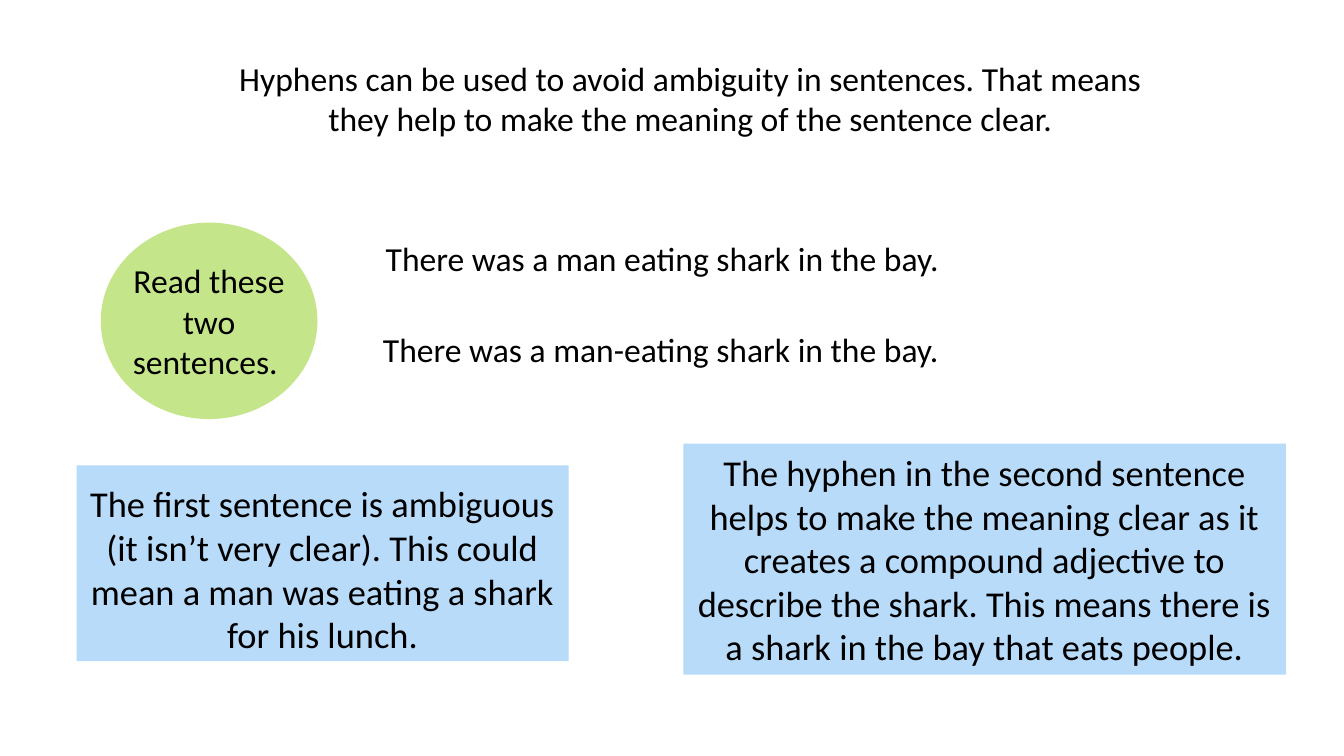
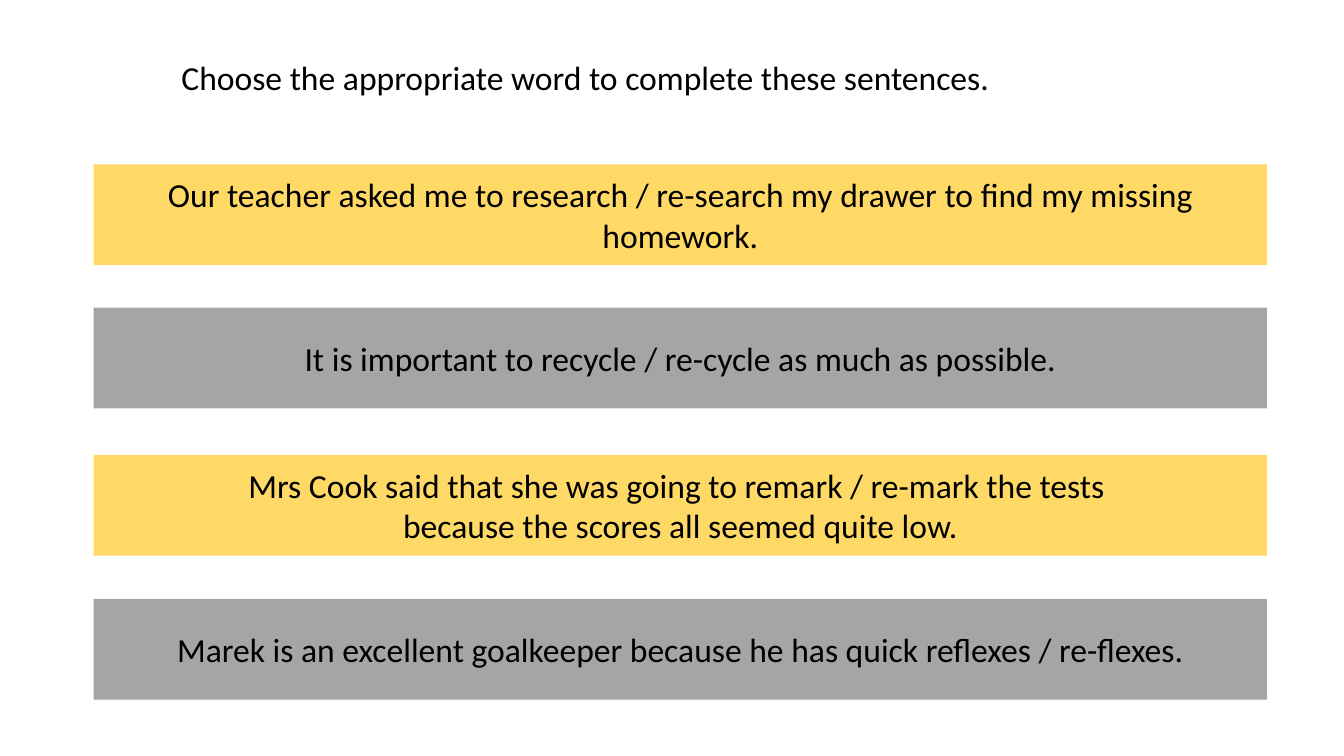
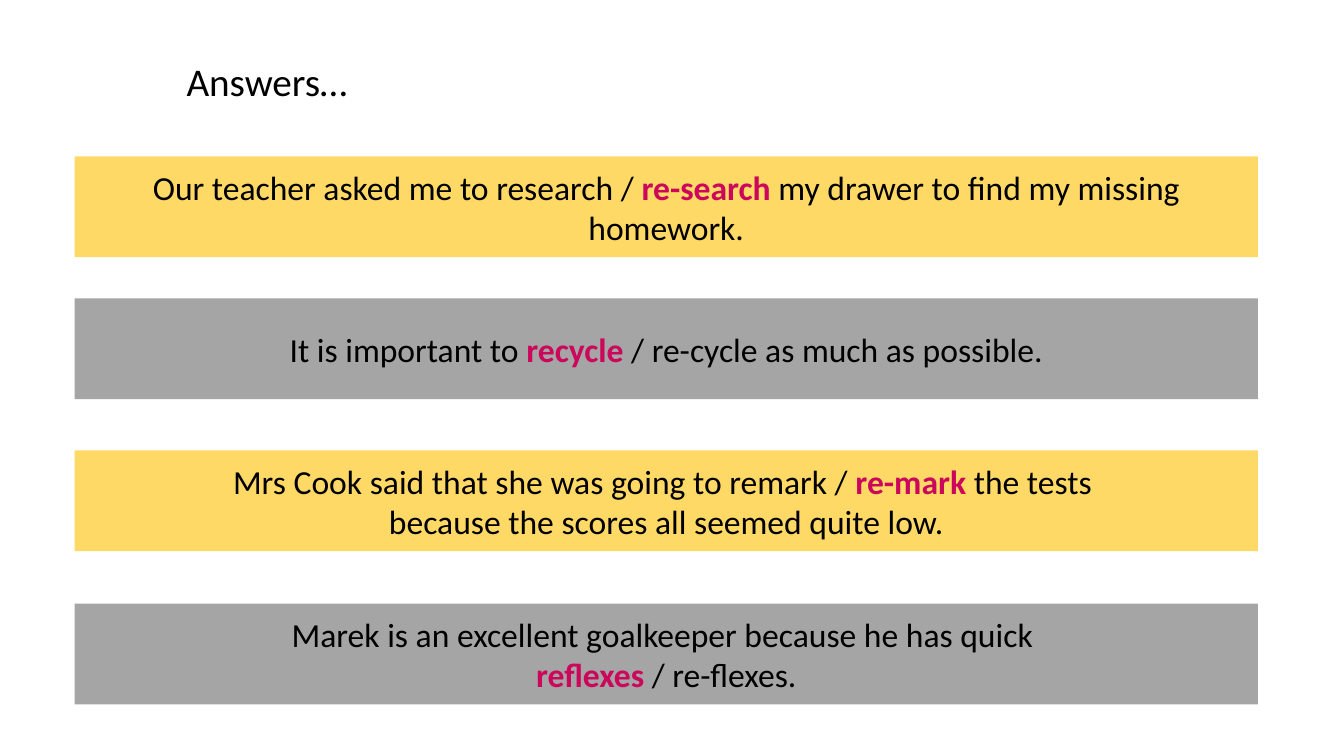
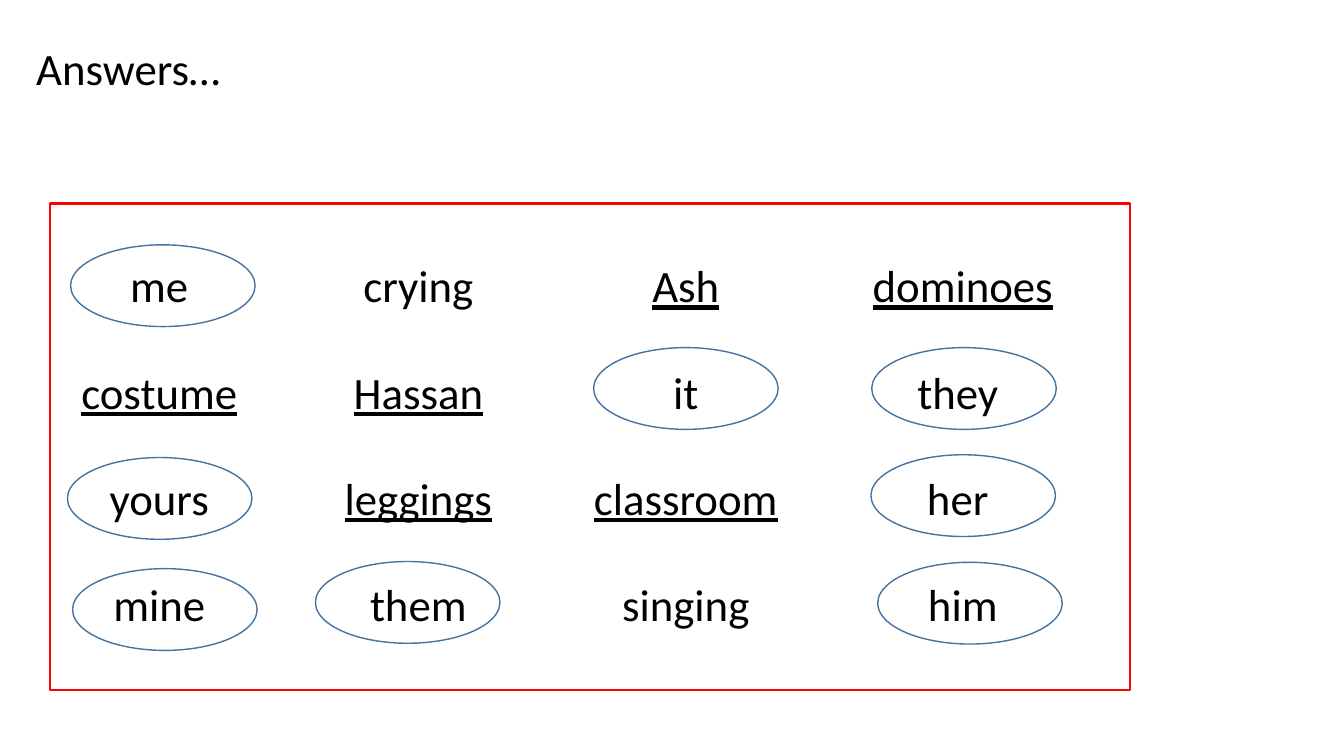
from pptx import Presentation
from pptx.dml.color import RGBColor
from pptx.enum import shapes, text
from pptx.util import Cm, Pt

BLACK = "000000"
PINK = "CB065B"
BLUE = "B8DBFA"
GREEN = "C5E58B"
YELLOW = "FFD966"
GREY = "A5A5A5"
RED = "FF0000"
RING_BLUE = "43739E"

LEFT, CENTER = text.PP_ALIGN.LEFT, text.PP_ALIGN.CENTER
TOP, MIDDLE, BOTTOM = text.MSO_ANCHOR.TOP, text.MSO_ANCHOR.MIDDLE, text.MSO_ANCHOR.BOTTOM
RECTANGLE, OVAL = shapes.MSO_SHAPE.RECTANGLE, shapes.MSO_SHAPE.OVAL
DEFAULT_INSETS = (0.25, 0.13)
TITLE_INSETS = (0, 0.2)
BAND_INSETS = (0.3, 0.3)

SENTENCES = [
    "Our teacher asked me to research / *re-search *my drawer to find my missing homework.",
    "It is important to *recycle */ re-cycle as much as possible.",
    "Mrs Cook said that she was going to remark / *re-mark *the tests \n"
    "because the scores all seemed quite low.",
    "Marek is an excellent goalkeeper because he has quick *reflexes */ re-flexes.",
]
NOUNS = {"costume", "Hassan", "leggings", "Ash", "classroom", "dominoes"}
WORD_COLUMNS = [
    (1.5, 5.03, ["me", "costume", "yours", "mine"]),
    (8.03, 5.03, ["crying", "Hassan", "leggings", "them"]),
    (14.53, 5.51, ["Ash", "it", "classroom", "singing"]),
    (21.51, 5.51, ["dominoes", "they ", "her ", "him"]),
]
PRONOUN_RINGS = [
    (1.78, 6.17), (1.7, 11.53), (1.83, 14.33), (7.95, 14.15),
    (14.96, 8.76), (21.97, 8.76), (21.95, 11.46), (22.12, 14.17),
]


def color(value):
    return RGBColor.from_string(value)


class Lesson:
    font = "Calibri"

    def __init__(self):
        self.deck = Presentation()
        self.deck.slide_width, self.deck.slide_height = Cm(33.87), Cm(19.05)
        self.page = None

    def style(self, span, size, tone=BLACK, bold=False):
        span.font.name = self.font
        span.font.size = Pt(size)
        span.font.bold = bold
        span.font.color.rgb = color(tone)

    def fill_text(self, box, content, size, align=CENTER, anchor=TOP, insets=DEFAULT_INSETS):
        frame = box.text_frame
        frame.word_wrap = True
        frame.auto_size = text.MSO_AUTO_SIZE.NONE
        frame.vertical_anchor = anchor
        frame.margin_left = frame.margin_right = Cm(insets[0])
        frame.margin_top = frame.margin_bottom = Cm(insets[1])
        para = frame.paragraphs[0]
        para.alignment = align
        for row, line in enumerate(content.split("\n")):
            if row:
                para.add_line_break()
            for index, piece in enumerate(line.split("*")):
                if piece:
                    span = para.add_run()
                    span.text = piece
                    answer = index % 2 == 1
                    self.style(span, size, PINK if answer else BLACK, answer)

    def new_page(self, title, area, size=24, align=LEFT, insets=TITLE_INSETS):
        self.page = self.deck.slides.add_slide(self.deck.slide_layouts[5])
        box = self.page.shapes.title
        box.left, box.top, box.width, box.height = map(Cm, area)
        self.fill_text(box, title, size, align, insets=insets)

    def shape(self, kind, area, fill=None, line=None, width=1):
        box = self.page.shapes.add_shape(kind, *map(Cm, area))
        box.shadow.inherit = False
        if fill:
            box.fill.solid()
            box.fill.fore_color.rgb = color(fill)
        else:
            box.fill.background()
        if line:
            box.line.color.rgb = color(line)
            box.line.width = Pt(width)
        else:
            box.line.fill.background()
        return box

    def panel(self, content, area, fill, size=26, anchor=MIDDLE, insets=DEFAULT_INSETS):
        box = self.shape(RECTANGLE, area, fill)
        self.fill_text(box, content, size, anchor=anchor, insets=insets)

    def label(self, content, area, align=LEFT):
        box = self.page.shapes.add_textbox(*map(Cm, area))
        self.fill_text(box, content, 24, align)

    def bands(self, sentences, left, width, tops):
        for index, (sentence, top) in enumerate(zip(sentences, tops)):
            fill = GREY if index % 2 else YELLOW
            self.panel(sentence, (left, top, width, 2.54), fill, 24, insets=BAND_INSETS)

    def word_column(self, words, left, width):
        box = self.page.shapes.add_textbox(Cm(left), Cm(6.38), Cm(width), Cm(9.83))
        frame = box.text_frame
        frame.word_wrap = True
        frame.text = "\n".join(words)
        for index, para in enumerate(frame.paragraphs):
            para.alignment = CENTER
            if index:
                para.space_before = Pt(37.5)
            for span in para.runs:
                self.style(span, 32)
                span.font.underline = span.text in NOUNS


def explain_hyphens(lesson):
    lesson.new_page(
        "Hyphens can be used to avoid ambiguity in sentences. That means "
        "they help to make the meaning of the sentence clear.",
        (5.33, 1.32, 24.13, 2.31), align=CENTER, insets=DEFAULT_INSETS)
    lesson.label("There was a man eating shark in the bay.", (9.47, 5.87, 16.94, 1.27))
    lesson.label("There was a man-eating shark in the bay.", (9.4, 8.15, 22.53, 1.27))
    lesson.shape(OVAL, (2.54, 5.61, 5.46, 4.95), GREEN)
    lesson.label("Read these two sentences. ", (2.92, 6.43, 4.7, 3.33), CENTER)
    lesson.panel(
        "The first sentence is ambiguous (it isn’t very clear). This could "
        "mean a man was eating a shark for his lunch.",
        (1.93, 11.73, 12.4, 4.93), BLUE, anchor=BOTTOM)
    lesson.panel(
        "The hyphen in the second sentence helps to make the meaning clear as it "
        "creates a compound adjective to describe the shark. This means there is "
        "a shark in the bay that eats people.",
        (17.22, 11.18, 15.19, 5.82), BLUE)


def choose_words(lesson):
    lesson.new_page("Choose the appropriate word to complete these sentences.",
                    (4.57, 1.24, 21.21, 1.42))
    questions = [sentence.replace("*", "") for sentence in SENTENCES]
    lesson.bands(questions, 2.36, 29.57, (4.14, 7.75, 11.46, 15.09))


def show_word_answers(lesson):
    lesson.new_page("Answers…", (4.7, 1.24, 21.21, 1.6), 28)
    answers = [sentence.replace("quick ", "quick \n") for sentence in SENTENCES]
    lesson.bands(answers, 1.88, 29.82, (3.94, 7.52, 11.35, 15.21))


def show_pronoun_answers(lesson):
    lesson.new_page("Answers…", (0.66, 0.89, 30.33, 1.63), 32, insets=DEFAULT_INSETS)
    lesson.shape(RECTANGLE, (1.27, 5.13, 27.2, 12.27), line=RED, width=1.5)
    for left, width, words in WORD_COLUMNS:
        lesson.word_column(words, left, width)
    for left, top in PRONOUN_RINGS:
        lesson.shape(OVAL, (left, top, 4.65, 2.06), line=RING_BLUE)


def main():
    lesson = Lesson()
    explain_hyphens(lesson)
    choose_words(lesson)
    show_word_answers(lesson)
    show_pronoun_answers(lesson)
    lesson.deck.save("out.pptx")


if __name__ == "__main__":
    main()
